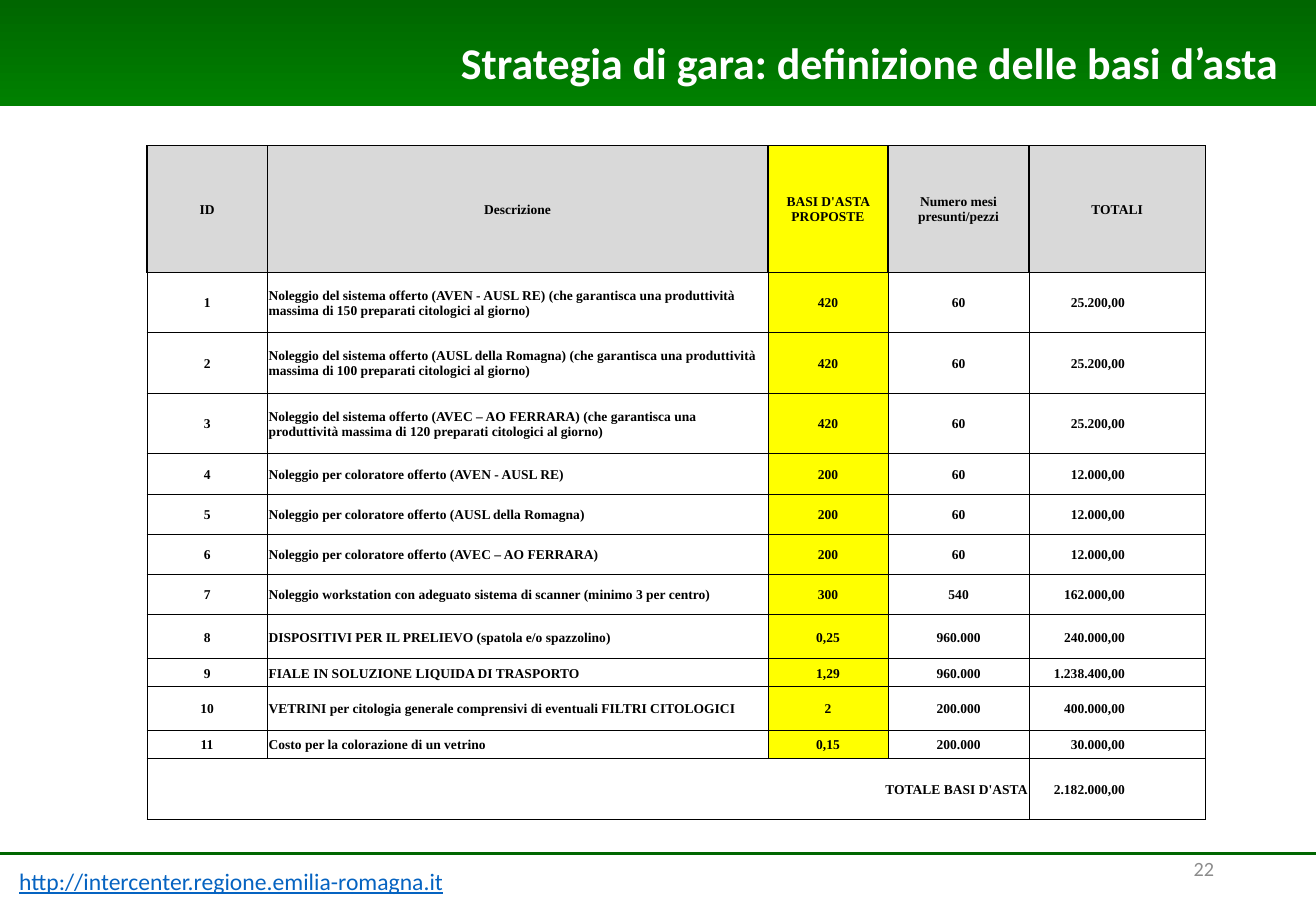
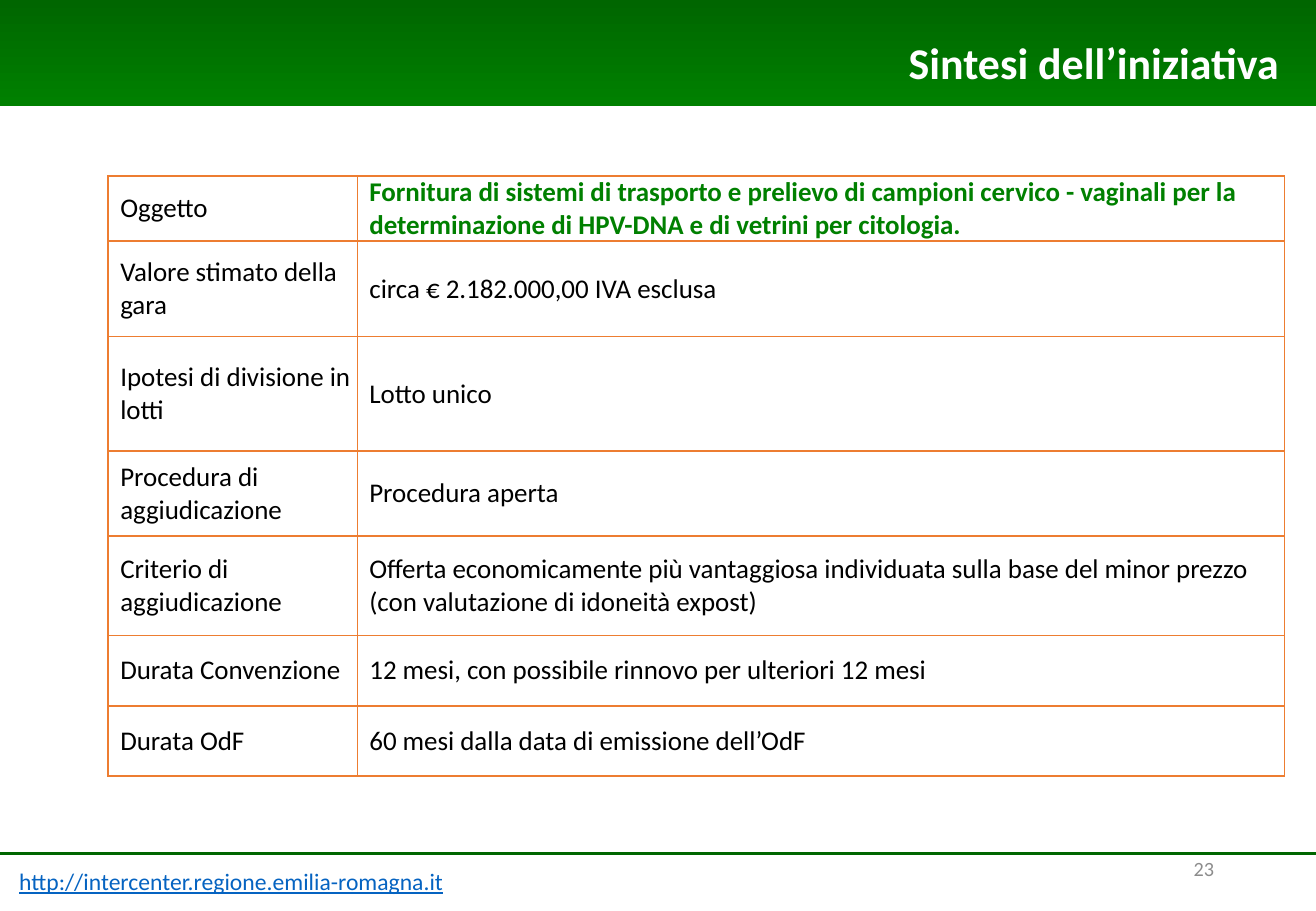
import pptx
import pptx.util
import pptx.dml.color
import pptx.enum.text
import pptx.enum.shapes
import pptx.oxml
import pptx.oxml.ns
from lxml import etree

Pt = pptx.util.Pt
Align = pptx.enum.text.PP_ALIGN
Anchor = pptx.enum.text.MSO_ANCHOR


class Theme:
    dark, green, white, black = "006600", "008000", "FFFFFF", "000000"
    link, grey, head, mark, edge = "0563C1", "8C8C8C", "D9D9D9", "FFFF00", "ED7D31"
    sans, serif = "Calibri", "Times New Roman"
    title, body, url, page, small = 26, 16, 14, 12, 8


def put(frame, text, size, tint, side=Align.LEFT, bold=False, face=Theme.sans):
    frame.text = text
    frame.word_wrap = True
    para = frame.paragraphs[0]
    para.alignment = side
    font = para.font
    font.name, font.size, font.bold = face, Pt(size), bold
    font.color.rgb = pptx.dml.color.RGBColor.from_string(tint)
    return font


def grid(slide, left, top, cols, rows, tint, thin, thick):
    table = slide.shapes.add_table(
        len(rows), len(cols), int(left * col), int(top * row),
        int(sum(cols) * col), int(sum(rows) * row)).table
    table.first_row = table.horz_banding = False
    for part, width in zip(table.columns, cols):
        part.width = int(width * col)
    for part, height in zip(table.rows, rows):
        part.height = int(height * row)
    for at, cell in enumerate(table.iter_cells()):
        cell.vertical_anchor = Anchor.MIDDLE
        props = cell._tc.get_or_add_tcPr()
        for side in "LRTB":
            wide = thick if at < len(cols) and side != "B" else thin
            line = etree.SubElement(
                props, pptx.oxml.ns.qn("a:ln" + side), w=str(Pt(wide)))
            fill = etree.SubElement(line, pptx.oxml.ns.qn("a:solidFill"))
            etree.SubElement(fill, pptx.oxml.ns.qn("a:srgbClr"), val=tint)
        cell.fill.background()
    return table


deck = pptx.Presentation()
deck.slide_width = pptx.util.Inches(10.83)
deck.slide_height = pptx.util.Inches(7.5)
col, row = deck.slide_width / 100, deck.slide_height / 100

slides = []
titles = ["Strategia di gara: definizione delle basi d’asta", "Sintesi dell’iniziativa"]
for page, text in enumerate(titles, 22):
    slide = deck.slides.add_slide(deck.slide_layouts[5])
    slides.append(slide)
    title = slide.shapes.title
    title.left, title.top = int(6 * col), int(3.2 * row)
    title.width, title.height = int(92.15 * col), int(7.2 * row)
    put(title.text_frame, text, Theme.title, Theme.white, Align.RIGHT, True)
    title.text_frame.auto_size = pptx.enum.text.MSO_AUTO_SIZE.NONE
    title.text_frame.vertical_anchor = Anchor.TOP

    band = slide.shapes.add_shape(
        pptx.enum.shapes.MSO_SHAPE.RECTANGLE, 0, 0, deck.slide_width, int(11.6 * row))
    band.shadow.inherit = False
    band.line.fill.background()
    band.fill.gradient()
    band.fill.gradient_angle = 270
    for stop, tint in zip(band.fill.gradient_stops, [Theme.dark, Theme.green]):
        stop.color.rgb = pptx.dml.color.RGBColor.from_string(tint)
    title.element.addprevious(band.element)

    site = slide.shapes.add_textbox(
        int(0.55 * col), int(94.53 * row), int(44.4 * col), int(4.5 * row))
    put(site.text_frame, "http://intercenter.regione.emilia-romagna.it",
        Theme.url, Theme.link).underline = True

    rule = slide.shapes.add_connector(
        pptx.enum.shapes.MSO_CONNECTOR.STRAIGHT,
        0, int(93.73 * row), deck.slide_width, int(93.73 * row))
    rule.line.width = Pt(1.75)
    rule.line.color.rgb = pptx.dml.color.RGBColor.from_string(Theme.dark)
    etree.SubElement(rule.element.spPr, pptx.oxml.ns.qn("a:effectLst"))

    box = slide.shapes.add_textbox(
        int(70.64 * col), int(92.67 * row), int(22.53 * col), int(5.33 * row))
    put(box.text_frame, str(page), Theme.page, Theme.grey, Align.RIGHT)
    box.text_frame.vertical_anchor = Anchor.MIDDLE

rent = "Noleggio del sistema offerto ({}) (che garantisca una produttività massima di {} preparati citologici al giorno)"
stain = "Noleggio per coloratore offerto ({})"
areas = ["AVEN - AUSL RE", "AUSL della Romagna", "AVEC – AO FERRARA"]
items = [(rent.format(area, most), "420", "60", "25.200,00")
         for area, most in zip(areas, [150, 100, 120])]
items += [(stain.format(area), "200", "60", "12.000,00") for area in areas]
items += [
    ("Noleggio workstation con adeguato sistema di scanner (minimo 3 per centro)",
     "300", "540", "162.000,00"),
    ("DISPOSITIVI PER IL PRELIEVO (spatola e/o spazzolino)",
     "0,25", "960.000", "240.000,00"),
    ("FIALE IN SOLUZIONE LIQUIDA DI TRASPORTO", "1,29", "960.000", "1.238.400,00"),
    ("VETRINI per citologia generale comprensivi di eventuali FILTRI CITOLOGICI",
     "2", "200.000", "400.000,00"),
    ("Costo per la colorazione di un vetrino", "0,15", "200.000", "30.000,00"),
]
lines = [("ID", "Descrizione", "BASI D'ASTA PROPOSTE",
          "Numero mesi presunti/pezzi", "TOTALI")]
lines += [(str(rank), *item) for rank, item in enumerate(items, 1)]
lines.append(("TOTALE BASI D'ASTA", "", "", "", "2.182.000,00"))

last = len(lines) - 1
sides = [Align.CENTER, Align.LEFT, Align.CENTER, Align.CENTER, Align.RIGHT]
costs = grid(slides[0], 11.17, 16, [9.14, 38.04, 9.14, 10.71, 13.39],
             [13.9] + [6.64] * 3 + [4.42] * 4 + [4.83, 3.07] * 2 + [6.64],
             Theme.black, 0.5, 1)
costs.cell(last, 0).merge(costs.cell(last, 3))
for y, line in enumerate(lines):
    for x, text in enumerate(line):
        cell = costs.cell(y, x)
        if cell.is_spanned:
            continue
        side = Align.CENTER if y == 0 else Align.RIGHT if y == last else sides[x]
        put(cell.text_frame, text, Theme.small, Theme.black, side, True, Theme.serif)
        cell.margin_left = cell.margin_top = cell.margin_right = int(0.1 * col)
        cell.margin_bottom = 0
        if x == 4 and y > 0:
            cell.margin_right = int(6.1 * col)
        tint = (Theme.mark if x == 2 and y < last else Theme.head if y == 0
                else Theme.white if x == 4 else None)
        if tint:
            cell.fill.solid()
            cell.fill.fore_color.rgb = pptx.dml.color.RGBColor.from_string(tint)

facts = [
    ("Oggetto", "Fornitura di sistemi di trasporto e prelievo di campioni cervico - vaginali per la determinazione di HPV-DNA e di vetrini per citologia."),
    ("Valore stimato della gara", "circa € 2.182.000,00 IVA esclusa"),
    ("Ipotesi di divisione in lotti", "Lotto unico"),
    ("Procedura di aggiudicazione", "Procedura aperta"),
    ("Criterio di aggiudicazione", "Offerta economicamente più vantaggiosa individuata sulla base del minor prezzo (con valutazione di idoneità expost)"),
    ("Durata Convenzione", "12 mesi, con possibile rinnovo per ulteriori 12 mesi"),
    ("Durata OdF", "60 mesi dalla data di emissione dell’OdF"),
]
brief = grid(slides[1], 8.22, 19.33, [18.93, 70.45],
             [6.4, 10.53, 12.53, 9.33, 10.93, 7.73, 7.73], Theme.edge, 1, 1)
for y, fact in enumerate(facts):
    for x, text in enumerate(fact):
        cell = brief.cell(y, x)
        key = y == 0 and x == 1
        put(cell.text_frame, text, Theme.body,
            Theme.green if key else Theme.black, bold=key)
        cell.margin_left = int(0.92 * col)
        cell.margin_top = cell.margin_right = cell.margin_bottom = 0

deck.save("out.pptx")
